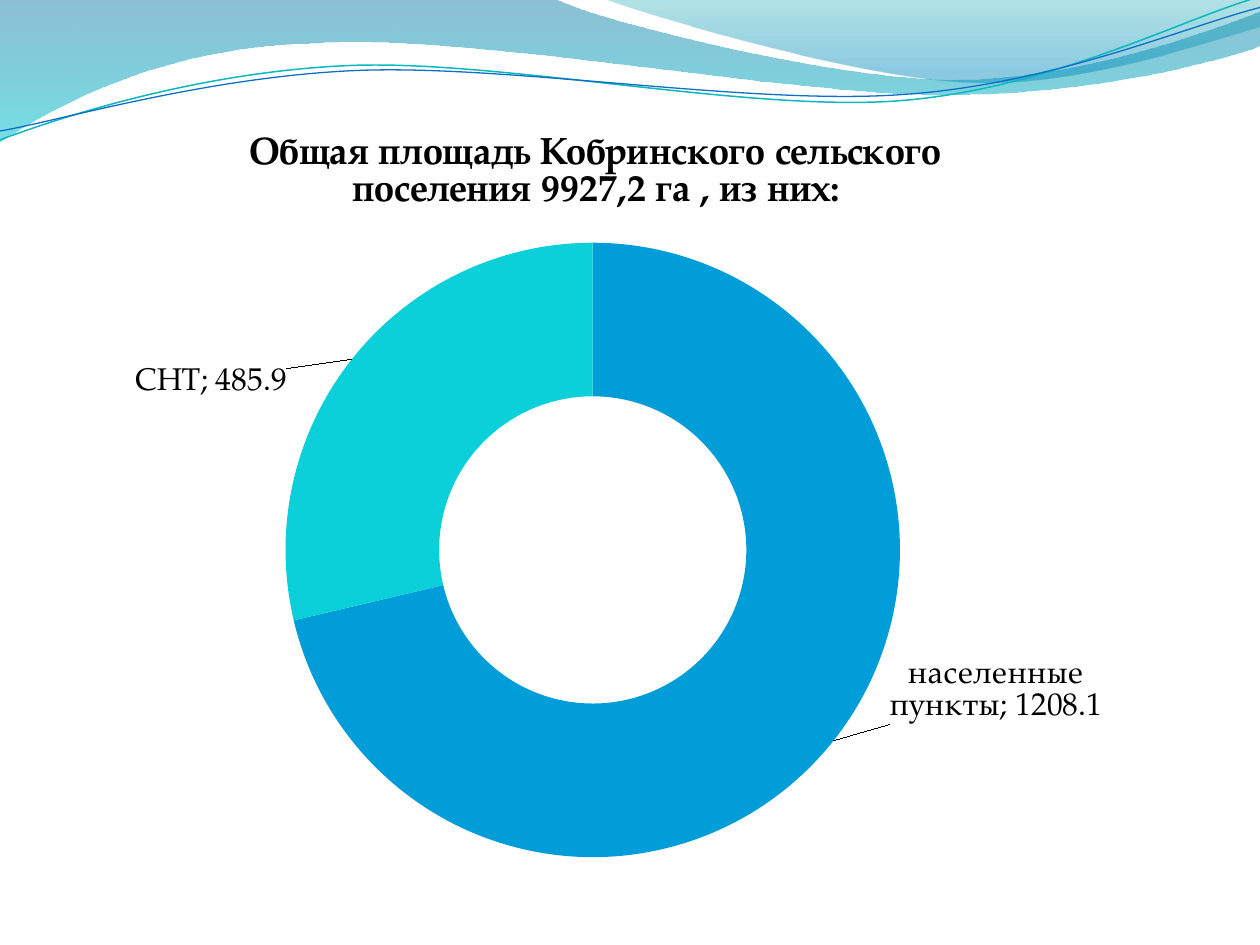
import math

from lxml import etree
from pptx import Presentation
from pptx.chart.data import CategoryChartData
from pptx.dml.color import RGBColor
from pptx.enum import chart as ch
from pptx.oxml import parse_xml
from pptx.oxml.ns import nsdecls, qn
from pptx.util import Inches, Pt

FONT = "TeX Gyre Pagella"
BLACK = RGBColor(0, 0, 0)
BLUE = RGBColor(0x0F, 0x6F, 0xC6)
SKY = RGBColor(0x00, 0x9D, 0xD9)
TURQUOISE = RGBColor(0x0B, 0xD0, 0xD9)
TEAL = RGBColor(0x0A, 0xB8, 0xBF)
WAVE_TOP = RGBColor(0x00, 0x74, 0xA1)
WAVE_BOTTOM = RGBColor(0x00, 0xC6, 0xCF)
CREST_TOP = RGBColor(0x00, 0xA1, 0xA9)
CREST_BOTTOM = RGBColor(0x00, 0x8B, 0xBF)
TILT = 2.7

WAVE = [(0, 0), (4.4, -0.01), (4.76, 0.17, 6.64, 0.63, 7.58, 0.63),
        (8.53, 0.63, 9.58, 0.26, 10, 0.09), (10.01, 0.36),
        (9.83, 0.44, 8.7, 0.76, 7.46, 0.75), (6.22, 0.75, 3.82, 0.28, 2.57, 0.34),
        (1.29, 0.36, 0.46, 0.83, -0.01, 1.13)]
CREST = [(4.79, -0.01), (5.09, 0.11, 6.82, 0.62, 7.69, 0.65),
         (8.56, 0.69, 9.61, 0.32, 10, 0.21), (10, 0)]
TEAL_CURVE = [(0, 1.11), (0.48, 0.93, 1.58, 0.57, 2.77, 0.52),
              (3.95, 0.47, 5.93, 0.89, 7.13, 0.8), (8.33, 0.71, 9.38, 0.15, 9.98, -0.02)]
BLUE_CURVE = [(0, 1.04), (0.47, 0.96, 1.64, 0.61, 2.83, 0.56),
              (4.03, 0.51, 5.97, 0.84, 7.17, 0.75), (8.36, 0.67, 9.41, 0.21, 10, 0.06)]


def turn(x, y, cx, cy, degrees):
    """Turn a point clockwise about a centre."""
    a = math.radians(degrees)
    dx, dy = x - cx, y - cy
    return (cx + dx * math.cos(a) - dy * math.sin(a),
            cy + dx * math.sin(a) + dy * math.cos(a))


def add_outline(shapes, segments, close, center=(0, 0), tilt=0):
    """Add a freeform of straight and cubic Bezier segments, given in inches."""
    points = [turn(x, y, *center, tilt)
              for seg in segments for x, y in zip(seg[::2], seg[1::2])]
    points = [(Inches(x), Inches(y)) for x, y in points]
    fb = shapes.build_freeform(*points[0])
    fb.add_line_segments(points[1:], close=close)
    sp = fb.convert_to_shape()
    lines = iter(list(sp.element.iter(qn("a:lnTo"))))
    for seg in segments[1:]:
        first = next(lines)
        if len(seg) == 6:
            curve = etree.Element(qn("a:cubicBezTo"))
            first.addprevious(curve)
            for line in (first, next(lines), next(lines)):
                curve.append(line[0])
                line.getparent().remove(line)
    sp.shadow.inherit = False
    sp.rotation = -tilt % 360
    return sp


def add_wave(s, segments, stops):
    """Add a closed shape with a translucent vertical gradient."""
    sp = add_outline(s.shapes, segments, True)
    sp.line.fill.background()
    sp.fill.gradient()
    sp.fill.gradient_angle = 270
    for stop, (position, color, _) in zip(sp.fill.gradient_stops, stops):
        stop.position = position
        stop.color.rgb = color
    for clr, (_, _, opacity) in zip(sp.element.spPr.iter(qn("a:srgbClr")), stops):
        etree.SubElement(clr, qn("a:alpha")).set("val", str(opacity * 1000))


def add_curve(group, segments, center, color, width):
    """Add an open, unfilled, tilted curve."""
    sp = add_outline(group.shapes, segments, False, center, TILT)
    sp.fill.background()
    sp.line.color.rgb = color
    sp.line.width = Pt(width)


def layout(x, y, w=None, h=None, edge=False):
    """Return a manual chart layout in fractions of the chart."""
    tags = [("x", x), ("y", y)]
    if edge:
        tags = [("xMode", "edge"), ("yMode", "edge"), *tags]
    if w is not None:
        tags = [("layoutTarget", "inner"), *tags, ("w", w), ("h", h)]
    body = "".join(f'<c:{tag} val="{val}"/>' for tag, val in tags)
    return parse_xml(f'<c:layout {nsdecls("c")}><c:manualLayout>{body}'
                     "</c:manualLayout></c:layout>")


def drop_layout(element):
    """Remove the automatic layout of a chart part."""
    for old in element.findall(qn("c:layout")):
        element.remove(old)


def style_font(font, size, bold=False):
    """Apply the chart font."""
    font.name, font.size, font.bold = FONT, Pt(size), bold
    font.color.rgb = BLACK


def add_title(chart, title):
    """Set and place the chart title."""
    tf = chart.chart_title.text_frame
    tf.text = title
    style_font(tf.paragraphs[0].font, 21.6, True)
    chart.chart_title.include_in_layout = False
    element = chart.element.find(".//" + qn("c:title"))
    drop_layout(element)
    element.find(qn("c:tx")).addnext(layout(0.17, 0.01, edge=True))


def label_points(series, offsets):
    """Show category and value on points, shifted outside the ring."""
    labels = series.data_labels
    labels.show_value = labels.show_category_name = True
    style_font(labels.font, 18)
    for i in offsets:
        style_font(series.points[i].data_label.font, 18)
    for lbl, offset in zip(series._element.iter(qn("c:dLbl")), offsets.values()):
        lbl.find(qn("c:idx")).addnext(layout(*offset))
        lbl.find(qn("c:showCatName")).set("val", "1")
        etree.SubElement(lbl, qn("c:separator")).text = "; "


def add_area_chart(s):
    """Add the doughnut of settlement areas."""
    data = CategoryChartData()
    data.categories = ["", "населенные пункты", "СНТ"]
    data.add_series("Series 1", [None, 1208.1, 485.9])
    chart = s.shapes.add_chart(ch.XL_CHART_TYPE.DOUGHNUT, Inches(0.5), Inches(0.94),
                               Inches(8.41), Inches(6.01), data).chart
    style_font(chart.font, 18)
    chart.has_legend = False
    add_title(chart, "Общая площадь Кобринского сельского поселения 9927,2 га , из них:")
    plot = chart.plots[0]
    plot.vary_by_categories = True
    series = plot.series[0]
    for i, color in enumerate([BLUE, SKY, TURQUOISE]):
        fill = series.points[i].format.fill
        fill.solid()
        fill.fore_color.rgb = color
    label_points(series, {1: (0.21, 0), 2: (-0.19, -0.03)})
    area = chart.element.find(".//" + qn("c:plotArea"))
    drop_layout(area)
    area.insert(0, layout(0.21, 0.16, 0.58, 0.82, edge=True))
    area.find(".//" + qn("c:holeSize")).set("val", "50")


def main():
    """Build the slide."""
    prs = Presentation()
    prs.slide_width, prs.slide_height = Inches(10), Inches(7.5)
    s = prs.slides.add_slide(prs.slide_layouts[6])
    add_wave(s, WAVE, [(0, WAVE_TOP, 45), (1, WAVE_BOTTOM, 55)])
    add_wave(s, CREST, [(0, CREST_TOP, 30), (0.8, CREST_BOTTOM, 45)])
    curves = s.shapes.add_group_shape()
    add_curve(curves, TEAL_CURVE, (4.99, 0.58), TEAL, 0.85)
    add_curve(curves, BLUE_CURVE, (5, 0.59), BLUE, 0.75)
    add_area_chart(s)
    prs.save("out.pptx")


if __name__ == "__main__":
    main()
